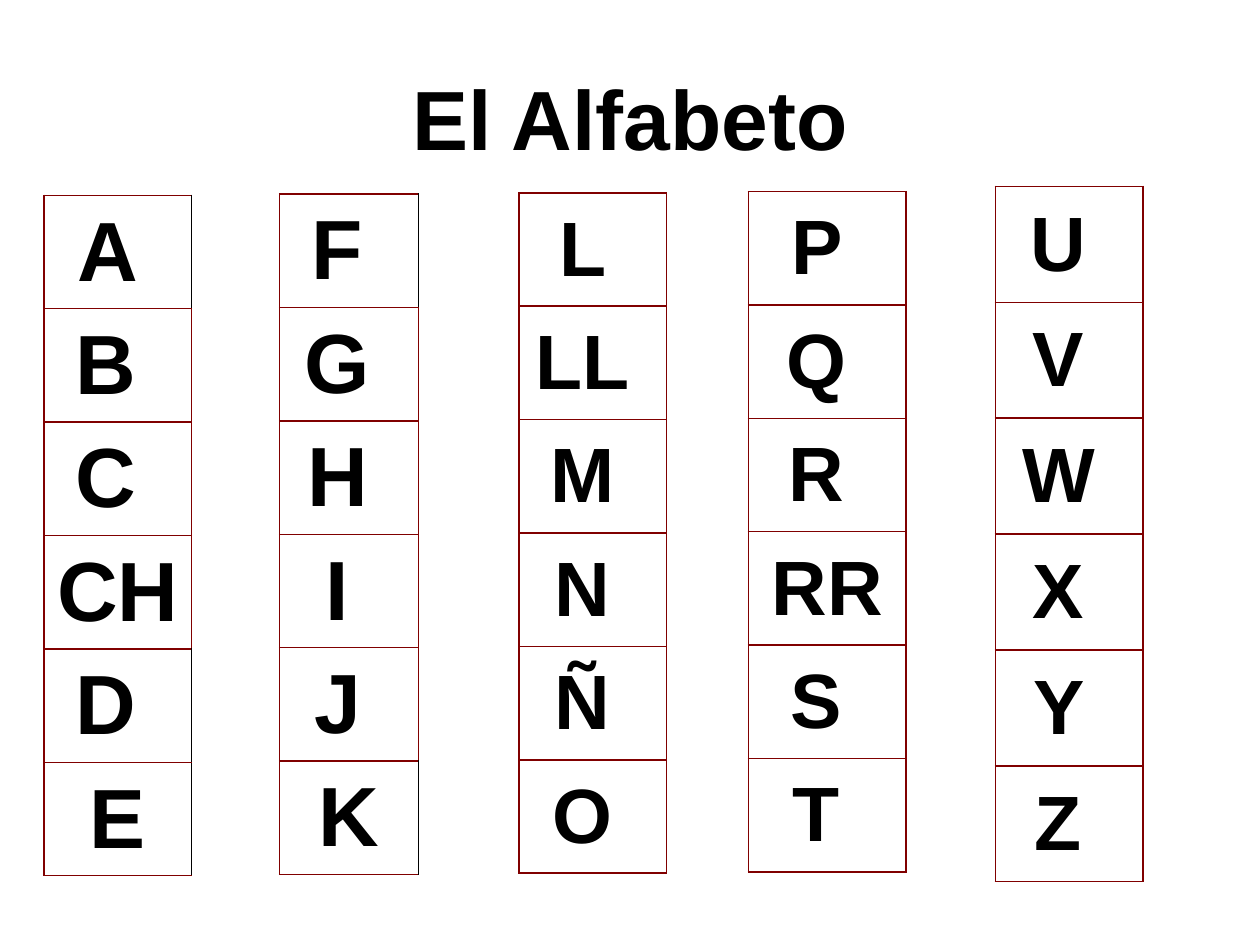
"""Build the Spanish alphabet slide: a title over five single-column letter tables."""
from lxml import etree
from pptx import Presentation
from pptx.dml.color import RGBColor
from pptx.enum.text import MSO_ANCHOR, PP_ALIGN
from pptx.oxml.ns import qn
from pptx.util import Inches, Pt

CENTER = PP_ALIGN.CENTER
MIDDLE = MSO_ANCHOR.MIDDLE
COLORS = {"text": "000000", "border": "800000", "edge": "000000", "bg": "FFFFFF"}
FONT = "Arial"
INDENT = Inches(0.38)

# left, top, width, row height, font size, letters, rows with a dark right edge
COLUMNS = [
    (0.35, 1.55, 1.17, 0.9, 48, ["A ", "B ", "C ", "CH ", "D ", "E"], {0, 4, 5}),
    (2.22, 1.54, 1.1, 0.9, 48, ["F ", "G ", "H ", "I ", "J ", "K"], {0, 5}),
    (4.12, 1.53, 1.17, 0.9, 44, ["L ", "LL ", "M ", "N ", "Ñ ", "O "], set()),
    (5.94, 1.52, 1.25, 0.9, 44, ["P ", "Q ", "R ", "RR ", "S ", "T "], set()),
    (7.9, 1.48, 1.17, 0.92, 44, ["U ", "V ", "W ", "X ", "Y ", "Z "], set()),
]


def format_text(tf, size):
    p = tf.paragraphs[0]
    p.alignment = CENTER
    font = p.runs[0].font
    font.name, font.size, font.bold = FONT, Pt(size), True
    font.color.rgb = RGBColor.from_string(COLORS["text"])
    return p


def set_borders(cell, dark_right):
    tc_pr = cell._tc.get_or_add_tcPr()
    for i, side in enumerate(["lnL", "lnR", "lnT", "lnB"]):
        dark = dark_right and side == "lnR"
        ln = etree.Element(qn(f"a:{side}"), w=str(Pt(0.75 if dark else 1)))
        fill = etree.SubElement(ln, qn("a:solidFill"))
        etree.SubElement(fill, qn("a:srgbClr"), val=COLORS["edge" if dark else "border"])
        tc_pr.insert(i, ln)


prs = Presentation()
prs.slide_width, prs.slide_height = Inches(10), Inches(7.5)
s = prs.slides.add_slide(prs.slide_layouts[5])
s.background.fill.solid()
s.background.fill.fore_color.rgb = RGBColor.from_string(COLORS["bg"])

title = s.shapes.title
title.left, title.top = Inches(0.5), Inches(0.3)
title.width, title.height = Inches(9), Inches(1.25)
title.text_frame.text = "El Alfabeto"
title.text_frame.vertical_anchor = MIDDLE
format_text(title.text_frame, 48)

for left, top, width, row_height, size, letters, dark_rows in COLUMNS:
    table = s.shapes.add_table(
        len(letters), 1, Inches(left), Inches(top),
        Inches(width), Inches(row_height * len(letters))).table
    table.first_row = table.horz_banding = False
    for i, letter in enumerate(letters):
        table.rows[i].height = Inches(row_height)
        cell = table.cell(i, 0)
        cell.fill.background()
        cell.vertical_anchor = MIDDLE
        cell.text_frame.text = letter
        p_pr = format_text(cell.text_frame, size)._p.get_or_add_pPr()
        p_pr.set("marL", str(INDENT))
        p_pr.set("indent", str(-INDENT))
        set_borders(cell, i in dark_rows)

prs.save("out.pptx")
